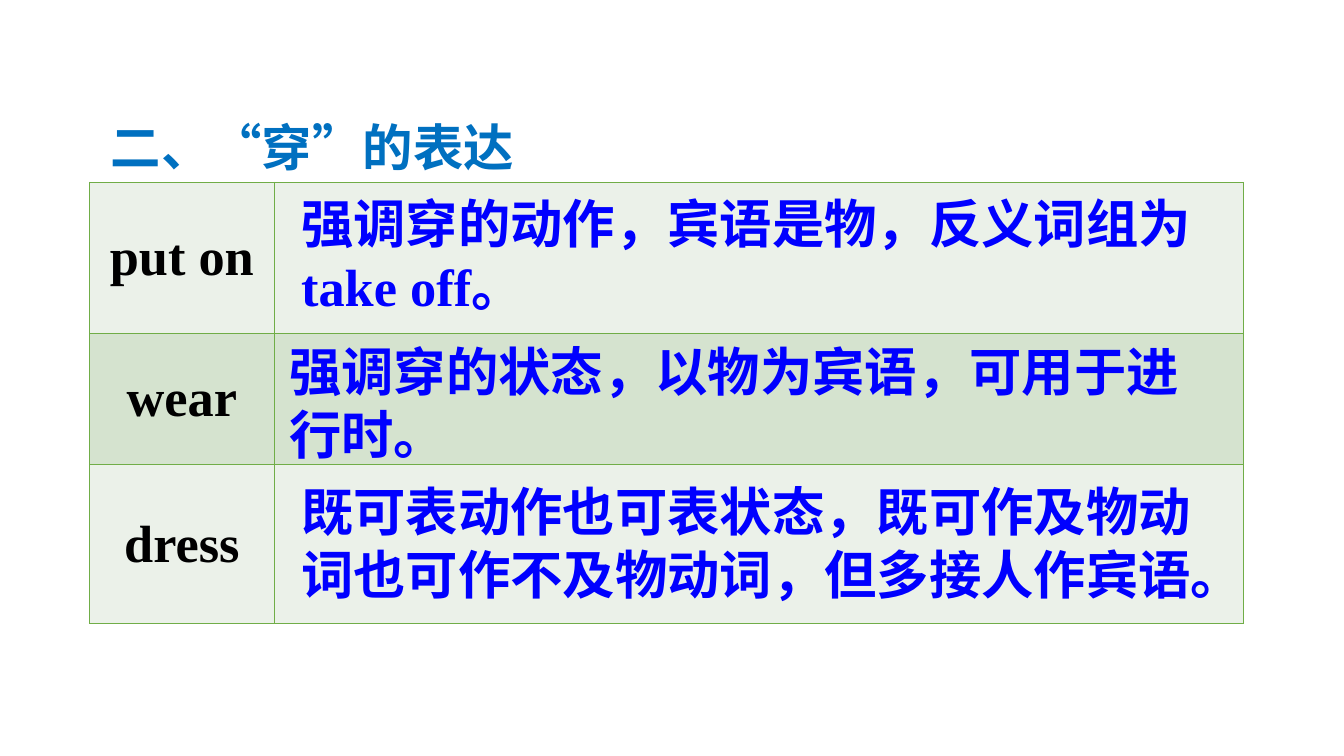
from lxml.etree import SubElement
from pptx import Presentation
from pptx.dml.color import RGBColor
from pptx.enum.text import MSO_ANCHOR, PP_ALIGN
from pptx.oxml.ns import qn
from pptx.util import Cm, Pt

SERIF = "Times New Roman"
BLACK, BLUE, HEADING_BLUE, GREEN = "000000", "0000FF", "0070C0", "70AD47"
BANDS = ("EBF1E9", "D5E3CF")
WORDS = (("put on", 3.81), ("wear", 3.3), ("dress", 4.01))
COLUMN_WIDTHS = (4.65, 24.43)
MEANINGS = (
    (7.34, 4.7, 23.39, "强调穿的动作，宾语是物，反义词组为take off。"),
    (7.04, 8.43, 23.42, "强调穿的状态，以物为宾语，可用于进行时。"),
    (7.34, 11.96, 23.7, "既可表动作也可表状态，既可作及物动词也可作不及物动词，但多接人作宾语。"),
)


def color(value):
    """Turn a hex string into a colour."""
    return RGBColor.from_string(value)


def add_span(para, text, size, value, font=SERIF):
    """Add one bold run to a paragraph."""
    span = para.add_run()
    span.text = text
    span.font.name = font
    span.font.size = Pt(size)
    span.font.bold = True
    span.font.color.rgb = color(value)


def add_box(page, left, top, width, height):
    """Add a wrapping text box and return its first paragraph."""
    box = page.shapes.add_textbox(Cm(left), Cm(top), Cm(width), Cm(height))
    box.text_frame.word_wrap = True
    return box.text_frame.paragraphs[0]


def style_cell(cell, fill):
    """Give a cell its borders, fill, margins and anchor."""
    properties = cell._tc.get_or_add_tcPr()
    for side in ("a:lnL", "a:lnR", "a:lnT", "a:lnB"):
        line = SubElement(properties, qn(side), w=str(Pt(1)))
        solid = SubElement(line, qn("a:solidFill"))
        SubElement(solid, qn("a:srgbClr"), val=GREEN)
    cell.fill.solid()
    cell.fill.fore_color.rgb = color(fill)
    cell.margin_left = cell.margin_right = Cm(0.33)
    cell.margin_top = cell.margin_bottom = Cm(0.17)
    cell.vertical_anchor = MSO_ANCHOR.MIDDLE


def add_word_table(page):
    """Add the table of verbs with banded rows."""
    height = sum(row_height for _, row_height in WORDS)
    table = page.shapes.add_table(
        len(WORDS), len(COLUMN_WIDTHS), Cm(2.26), Cm(4.6),
        Cm(sum(COLUMN_WIDTHS)), Cm(height)).table
    table.first_row = False
    for column, width in zip(table.columns, COLUMN_WIDTHS):
        column.width = Cm(width)
    for index, (word, row_height) in enumerate(WORDS):
        row = table.rows[index]
        row.height = Cm(row_height)
        for cell in row.cells:
            style_cell(cell, BANDS[index % 2])
        para = row.cells[0].text_frame.paragraphs[0]
        para.alignment = PP_ALIGN.CENTER
        add_span(para, word, 37.4, BLACK)


def main():
    """Build the slide and save it."""
    deck = Presentation()
    deck.slide_width, deck.slide_height = Cm(33.87), Cm(19.05)
    page = deck.slides.add_slide(deck.slide_layouts[6])
    add_word_table(page)
    for left, top, width, text in MEANINGS:
        add_span(add_box(page, left, top, width, 3.45), text, 37.4, BLUE)
    heading = add_box(page, 2.54, 2.79, 22.81, 1.8)
    add_span(heading, "二、", 36, HEADING_BLUE, "Arial")
    add_span(heading, "“穿”的表达", 36, HEADING_BLUE)
    deck.save("out.pptx")


if __name__ == "__main__":
    main()
